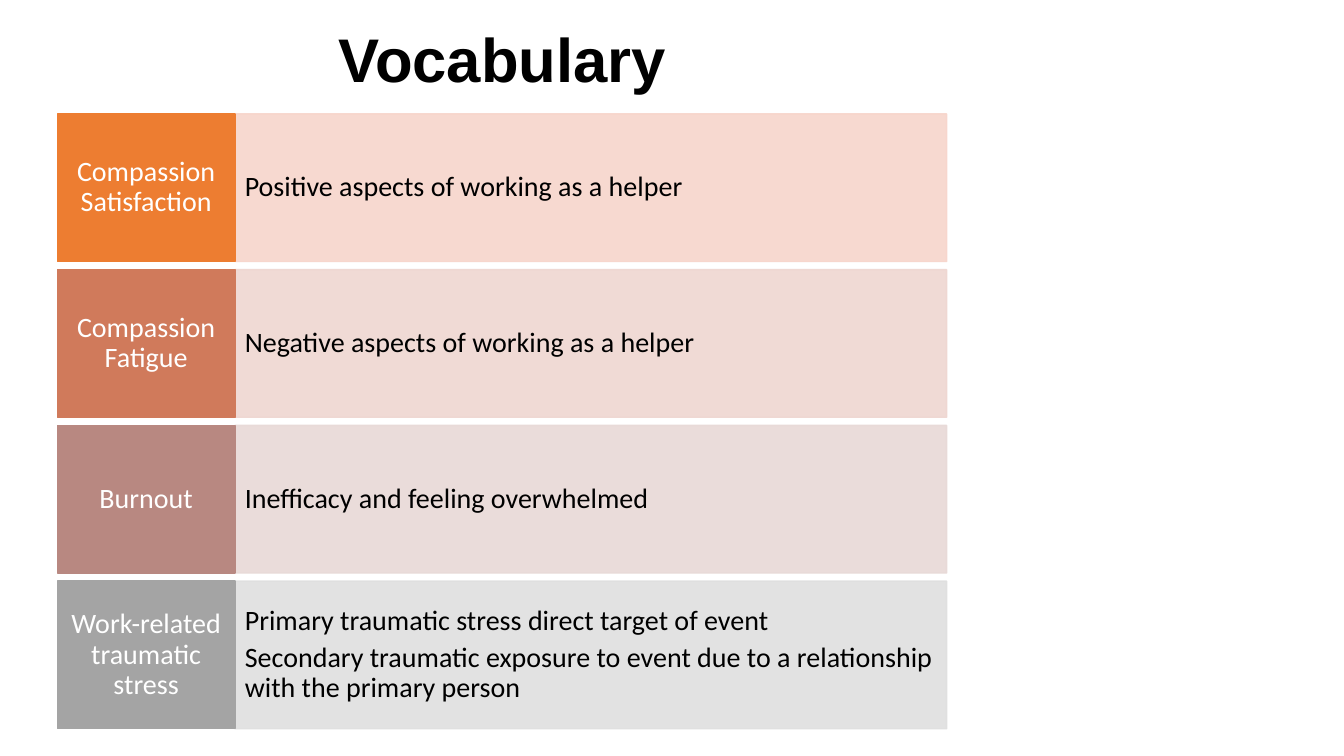
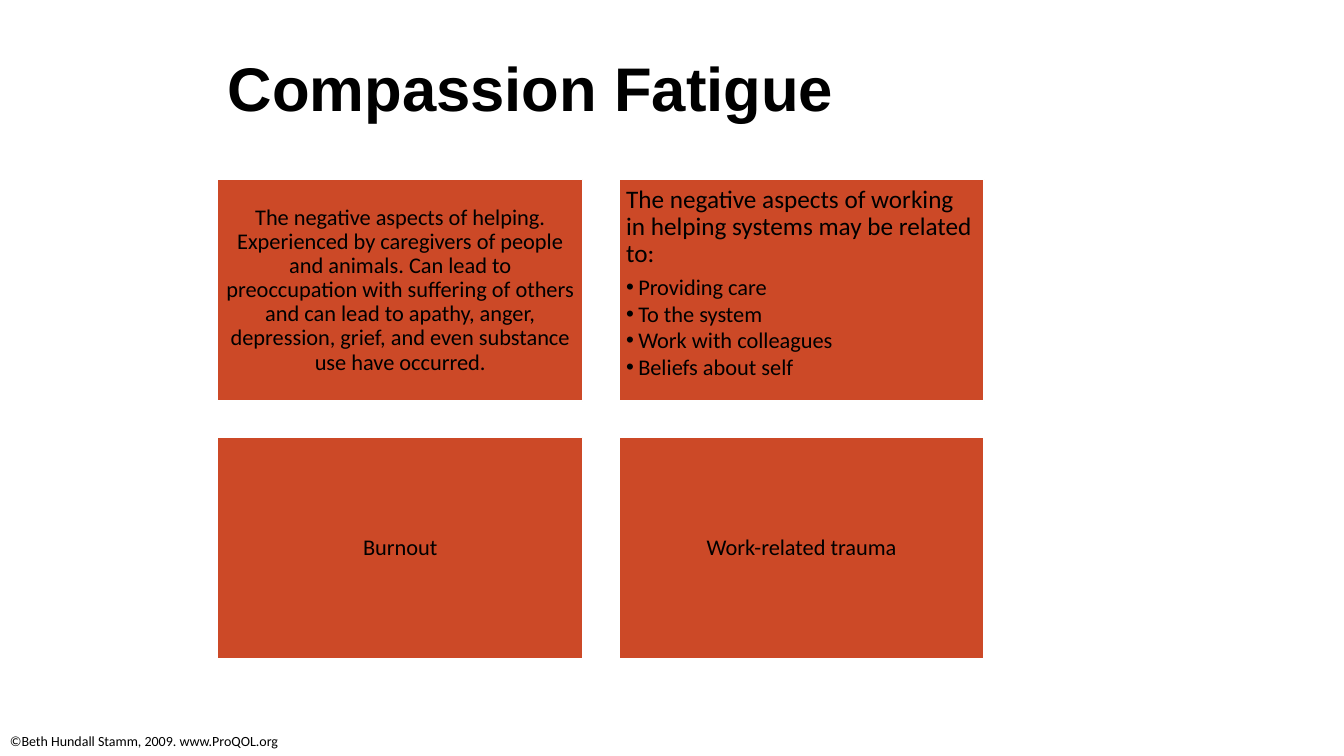
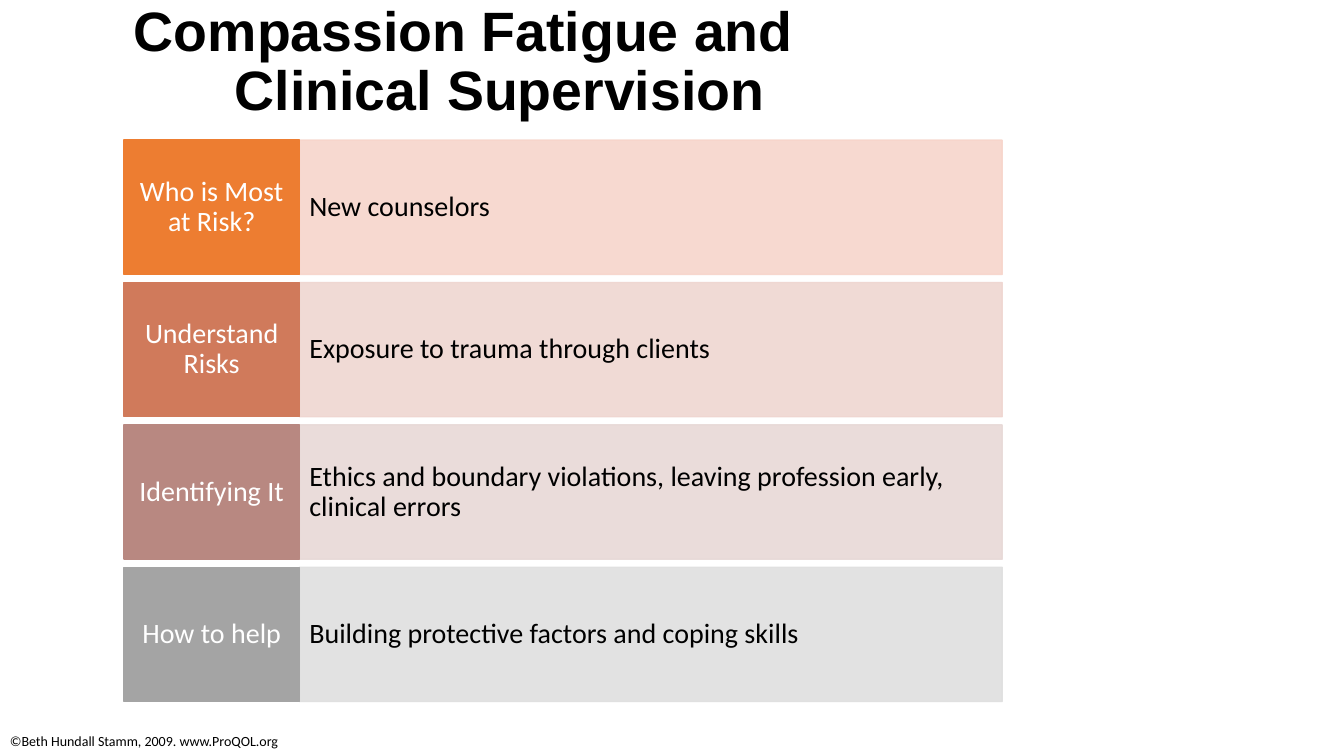
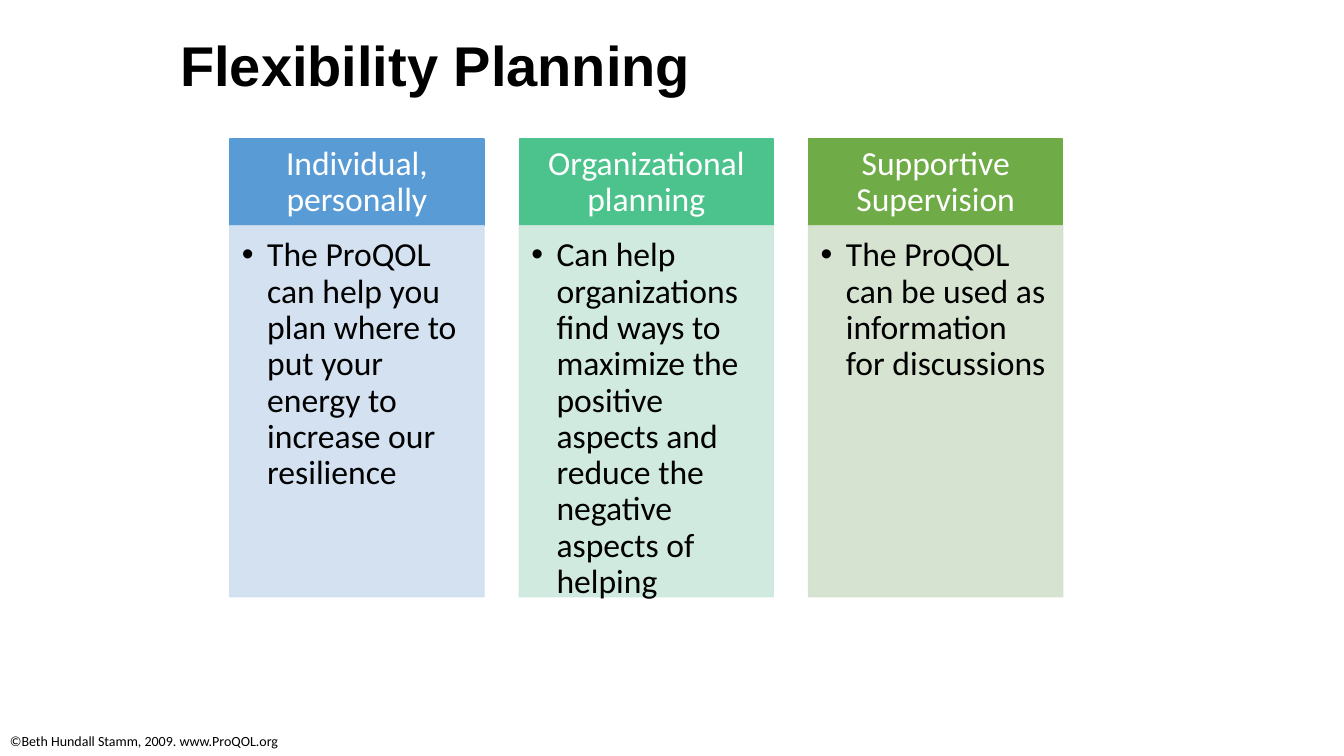
import pptx
import pptx.dml.color
import pptx.enum.shapes
import pptx.enum.text
import pptx.oxml.ns
import pptx.util
from lxml import etree

Inches = pptx.util.Inches
Pt = pptx.util.Pt
Align = pptx.enum.text.PP_ALIGN
Anchor = pptx.enum.text.MSO_ANCHOR
qn = pptx.oxml.ns.qn

COLORS = {
    "black": "000000", "white": "FFFFFF", "rust": "CC4927",
    "orange": "ED7D31", "orange tint": "F7D5CB",
    "clay": "D07A5B", "clay tint": "EFD6D1",
    "rose": "B88881", "rose tint": "E8D9D7",
    "gray": "A4A4A4", "gray tint": "DFDFDF",
    "blue": "599BD5", "blue tint": "CFDEEF",
    "teal": "4CC38C", "teal tint": "CCE8DD",
    "green": "6FAB46", "green tint": "D3E1CC",
}
ROW_COLORS = ("orange", "clay", "rose", "gray")


class Deck:
    """Hold the shared style and the current slide."""

    def __init__(self):
        self.presentation = pptx.Presentation()
        self.presentation.slide_width = Inches(13.33)
        self.presentation.slide_height = Inches(7.5)
        self.slide = None

    def start(self, title_lines, title_box, title_size=44, footer=True):
        self.slide = self.presentation.slides.add_slide(self.presentation.slide_layouts[6])
        title = self.text_frame(self.slide.shapes.add_textbox(*map(Inches, title_box)), Anchor.MIDDLE)
        for position, line in enumerate(title_lines):
            self.add_text(title, line, title_size, font="Arial", bold=True, margin=position)
        if footer:
            box = self.slide.shapes.add_textbox(0, Inches(7.22), Inches(2.96), Inches(0.28))
            self.add_text(self.text_frame(box), "©Beth Hundall Stamm, 2009. www.ProQOL.org", 10, spacing=1.0)

    def text_frame(self, shape, anchor=Anchor.TOP, insets=(0.1, 0.05, 0.1, 0.05)):
        frame = shape.text_frame
        frame.word_wrap = True
        frame.vertical_anchor = anchor
        frame.margin_left, frame.margin_top, frame.margin_right, frame.margin_bottom = map(Inches, insets)
        return frame

    def add_text(self, frame, text, size, color="black", font="Calibri", bold=False,
                 align=Align.LEFT, before=0, margin=0, bullet=False, spacing=0.9):
        paragraph = frame.paragraphs[0]
        if paragraph.runs:
            paragraph = frame.add_paragraph()
        properties = paragraph._p.get_or_add_pPr()
        properties.set("marL", str(Inches(margin)))
        properties.set("indent", str(Inches(-margin if bullet else 0)))
        if bullet:
            etree.SubElement(properties, qn("a:buFont")).set("typeface", "Arial")
            etree.SubElement(properties, qn("a:buChar")).set("char", "•")
        paragraph.alignment = align
        paragraph.line_spacing = spacing
        if before:
            paragraph.space_before = Pt(before)
        run = paragraph.add_run()
        run.text = text
        run.font.size = Pt(size)
        run.font.name = font
        run.font.bold = bold
        run.font.color.rgb = self.color(color)

    def color(self, name):
        return pptx.dml.color.RGBColor.from_string(COLORS[name])

    def panel(self, box, fill, line=None, anchor=Anchor.MIDDLE, insets=(0.07, 0.07, 0.07, 0.07)):
        shape = self.slide.shapes.add_shape(
            pptx.enum.shapes.MSO_SHAPE.RECTANGLE, *map(Inches, box))
        shape.shadow.inherit = False
        shape.fill.solid()
        shape.fill.fore_color.rgb = self.color(fill)
        shape.line.color.rgb = self.color(line or fill)
        shape.line.width = Pt(1)
        if fill.endswith("tint"):
            for color in shape._element.spPr.iter(qn("a:srgbClr")):
                etree.SubElement(color, qn("a:alpha")).set("val", "90000")
        return self.text_frame(shape, anchor, insets)

    def rows(self, left, top, bottom, label_width, text_width, entries, gap=0.08):
        pitch = (bottom - top + gap) / len(entries)
        height = pitch - gap
        for index, (color, (label, lines)) in enumerate(zip(ROW_COLORS, entries)):
            y = top + index * pitch
            detail = self.panel((left + label_width, y, text_width, height), color + " tint",
                                insets=(0.1, 0.37, 0.1, 0.37))
            for position, line in enumerate(lines):
                self.add_text(detail, line, 20, before=4.5 if position else 0)
            heading = self.panel((left, y, label_width, height), color,
                                 insets=(0.07, 0.14, 0.07, 0.14))
            self.add_text(heading, label, 20, "white", align=Align.CENTER)

    def column(self, left, color, heading, text):
        header = self.panel((left, 1.38, 2.52, 0.86), color, insets=(0.16, 0.09, 0.16, 0.09))
        self.add_text(header, heading, 24, "white", align=Align.CENTER)
        body = self.panel((left, 2.24, 2.52, 3.68), color + " tint", anchor=Anchor.TOP,
                          insets=(0.12, 0.12, 0.16, 0.17))
        self.add_text(body, text, 24, margin=0.25, bullet=True)

    def tile(self, column, row, anchor=Anchor.MIDDLE):
        box = (2.16 + column * 3.98, 1.78 + row * 2.56, 3.62, 2.2)
        return self.panel(box, "rust", "white", anchor)


def vocabulary(deck):
    deck.start(["Vocabulary"], (3.26, 0.12, 4.89, 1.01), footer=False)
    deck.rows(0.57, 1.13, 7.23, 1.76, 7.06, [
        ("Compassion Satisfaction", ["Positive aspects of working as a helper"]),
        ("Compassion Fatigue", ["Negative aspects of working as a helper"]),
        ("Burnout", ["Inefficacy and feeling overwhelmed"]),
        ("Work-related traumatic stress", [
            "Primary traumatic stress direct target of event",
            "Secondary traumatic exposure to event due to a relationship with the primary person"]),
    ])


def compassion_fatigue(deck):
    deck.start(["Compassion Fatigue"], (2.16, 0.4, 8.24, 1.01))
    centered = [
        (0, 0, "The negative aspects of helping. Experienced by caregivers of people and animals. "
               "Can lead to preoccupation with suffering of others and can lead to apathy, anger, "
               "depression, grief, and even substance use have occurred."),
        (0, 1, "Burnout"),
        (1, 1, "Work-related trauma"),
    ]
    for column, row, text in centered:
        deck.add_text(deck.tile(column, row), text, 16, align=Align.CENTER)
    causes = deck.tile(1, 0, Anchor.TOP)
    deck.add_text(causes, "The negative aspects of working in helping systems may be related to:", 18)
    for index, cause in enumerate(("Providing care", "To the system",
                                   "Work with colleagues", "Beliefs about self")):
        deck.add_text(causes, cause, 16, before=1.8 if index else 5.6, margin=0.12, bullet=True)


def clinical_supervision(deck):
    deck.start(["Compassion Fatigue and", "Clinical Supervision"], (1.23, 0.12, 10.49, 1.01), 39.6)
    deck.rows(1.23, 1.39, 6.96, 1.74, 6.97, [
        ("Who is Most at Risk?", ["New counselors"]),
        ("Understand Risks", ["Exposure to trauma through clients"]),
        ("Identifying It", ["Ethics and boundary violations, leaving profession early, clinical errors"]),
        ("How to help", ["Building protective factors and coping skills"]),
    ])


def flexibility_planning(deck):
    deck.start(["Flexibility Planning"], (1.69, 0.17, 9.46, 1.01), 40)
    columns = [
        ("blue", "Individual, personally",
         "The ProQOL can help you plan where to put your energy to increase our resilience"),
        ("teal", "Organizational planning",
         "Can help organizations find ways to maximize the positive aspects "
         "and reduce the negative aspects of helping"),
        ("green", "Supportive Supervision",
         "The ProQOL can be used as information for discussions"),
    ]
    for index, (color, heading, text) in enumerate(columns):
        deck.column(2.28 + index * 2.87, color, heading, text)


def main():
    deck = Deck()
    for build in (vocabulary, compassion_fatigue, clinical_supervision, flexibility_planning):
        build(deck)
    deck.presentation.save("out.pptx")


if __name__ == "__main__":
    main()
